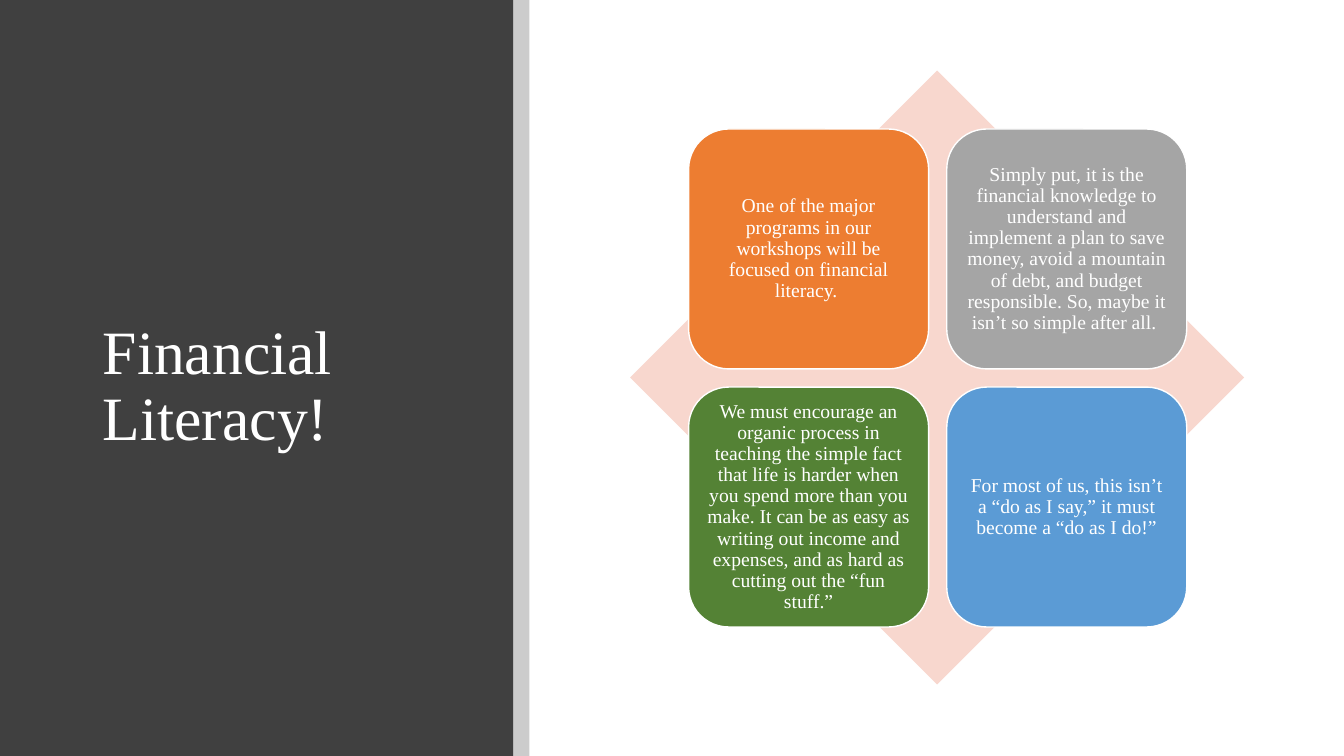
from dataclasses import dataclass

from lxml.etree import SubElement
from pptx import Presentation
from pptx.dml.color import RGBColor
from pptx.enum.shapes import MSO_SHAPE
from pptx.enum.text import MSO_ANCHOR, MSO_AUTO_SIZE, PP_ALIGN
from pptx.oxml.ns import qn
from pptx.util import Inches, Pt


@dataclass(frozen=True)
class Theme:
    font: str = "Times New Roman"
    title_size: int = 44
    card_size: int = 14
    white: str = "FFFFFF"
    panel: str = "404040"
    strip: str = "000000"
    strip_opacity: int = 20
    diamond: str = "F8D7CE"
    orange: str = "ED7D31"
    gray: str = "A5A5A5"
    green: str = "548235"
    blue: str = "5B9BD5"


THEME = Theme()

CARDS = [
    (THEME.orange, "One of the major programs in our workshops will be focused "
                   "on financial literacy. "),
    (THEME.gray, "Simply put, it is the financial knowledge to understand and "
                 "implement a plan to save money, avoid a mountain of debt, and "
                 "budget responsible. So, maybe it isn’t so simple after all. "),
    (THEME.green, "We must encourage an organic process in teaching the simple "
                  "fact that life is harder when you spend more than you make. "
                  "It can be as easy as writing out income and expenses, and as "
                  "hard as cutting out the “fun stuff.”"),
    (THEME.blue, "For most of us, this isn’t a “do as I say,” it must become a "
                 "“do as I do!”"),
]
CARD_LEFT, CARD_TOP = 6.83, 1.28
CARD_SIZE, CARD_STEP = 2.38, 2.56


def add_filled_shape(slide, kind, left, top, width, height, color):
    shape = slide.shapes.add_shape(
        kind, Inches(left), Inches(top), Inches(width), Inches(height))
    shape.shadow.inherit = False
    shape.fill.solid()
    shape.fill.fore_color.rgb = RGBColor.from_string(color)
    shape.line.fill.background()
    return shape


def set_opacity(shape, percent):
    color = shape.element.spPr.find(qn("a:solidFill"))[0]
    SubElement(color, qn("a:alpha")).set("val", str(percent * 1000))


def write_text(shape, text, size, alignment):
    frame = shape.text_frame
    frame.word_wrap = True
    frame.auto_size = MSO_AUTO_SIZE.NONE
    frame.vertical_anchor = MSO_ANCHOR.MIDDLE
    paragraph = frame.paragraphs[0]
    paragraph.alignment = alignment
    paragraph.line_spacing = 0.9
    run = paragraph.add_run()
    run.text = text
    run.font.name = THEME.font
    run.font.size = Pt(size)
    run.font.color.rgb = RGBColor.from_string(THEME.white)


def add_title(slide, text):
    title = slide.shapes.title
    title.left, title.top = Inches(0.92), Inches(0.89)
    title.width, title.height = Inches(3.65), Inches(5.91)
    write_text(title, text, THEME.title_size, PP_ALIGN.LEFT)
    return title


def add_card(slide, left, top, color, text):
    card = add_filled_shape(slide, MSO_SHAPE.ROUNDED_RECTANGLE,
                            left, top, CARD_SIZE, CARD_SIZE, color)
    card.line.color.rgb = RGBColor.from_string(THEME.white)
    card.line.width = Pt(1)
    frame = card.text_frame
    frame.margin_left = frame.margin_right = Inches(0.06)
    frame.margin_top = frame.margin_bottom = Inches(0.06)
    write_text(card, text, THEME.card_size, PP_ALIGN.CENTER)


def main():
    presentation = Presentation()
    presentation.slide_width = Inches(13.33)
    presentation.slide_height = Inches(7.5)
    slide = presentation.slides.add_slide(presentation.slide_layouts[5])

    title = add_title(slide, "Financial Literacy!")
    panel = add_filled_shape(slide, MSO_SHAPE.RECTANGLE,
                             0, 0, 5.09, 7.5, THEME.panel)
    title.element.addprevious(panel.element)  # keep the panel behind the title
    strip = add_filled_shape(slide, MSO_SHAPE.RECTANGLE,
                             5.09, 0, 0.16, 7.5, THEME.strip)
    set_opacity(strip, THEME.strip_opacity)

    add_filled_shape(slide, MSO_SHAPE.DIAMOND,
                     6.25, 0.7, 6.09, 6.09, THEME.diamond)
    for index, (color, text) in enumerate(CARDS):
        row, column = divmod(index, 2)
        add_card(slide, CARD_LEFT + column * CARD_STEP,
                 CARD_TOP + row * CARD_STEP, color, text)

    presentation.save("out.pptx")


if __name__ == "__main__":
    main()
